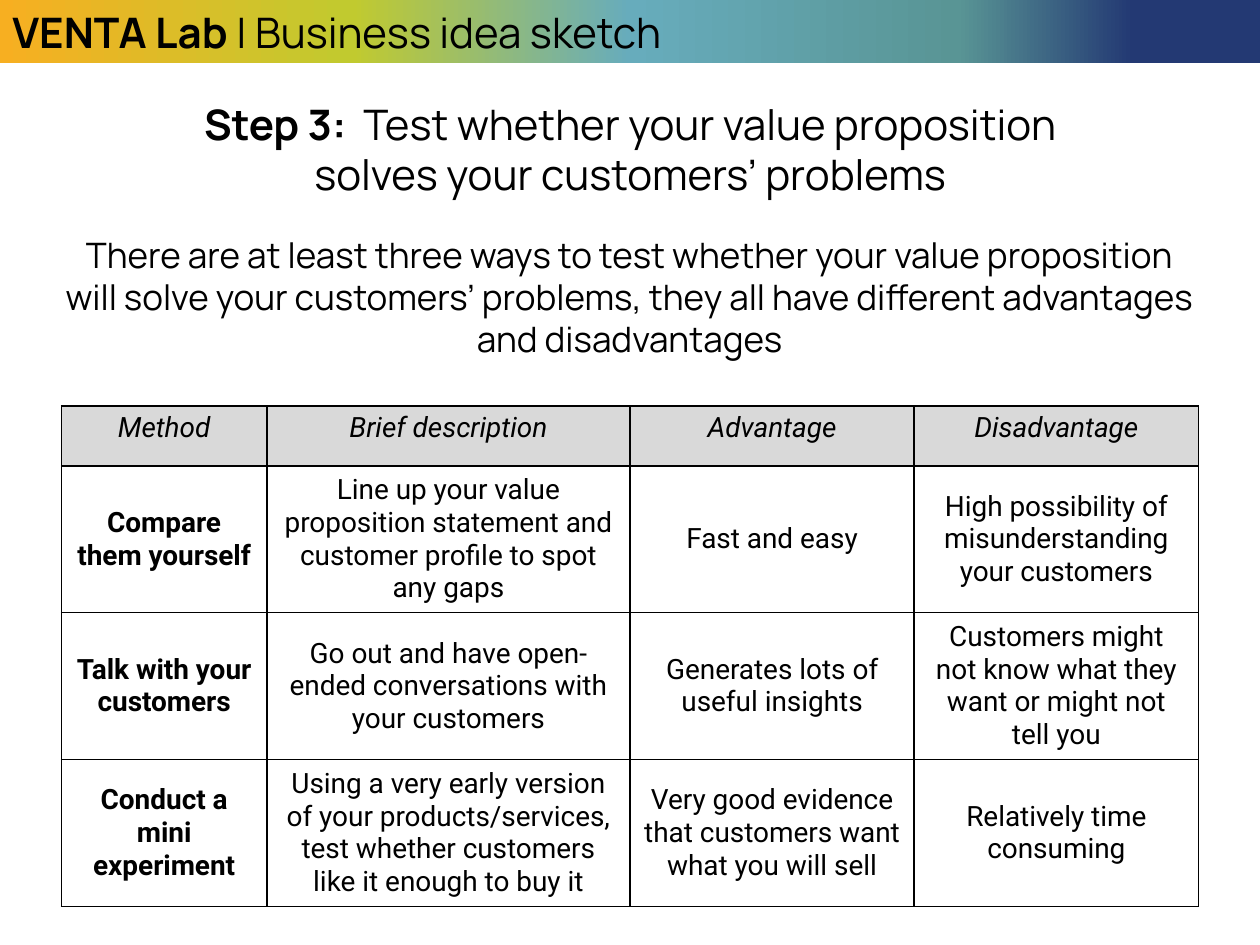
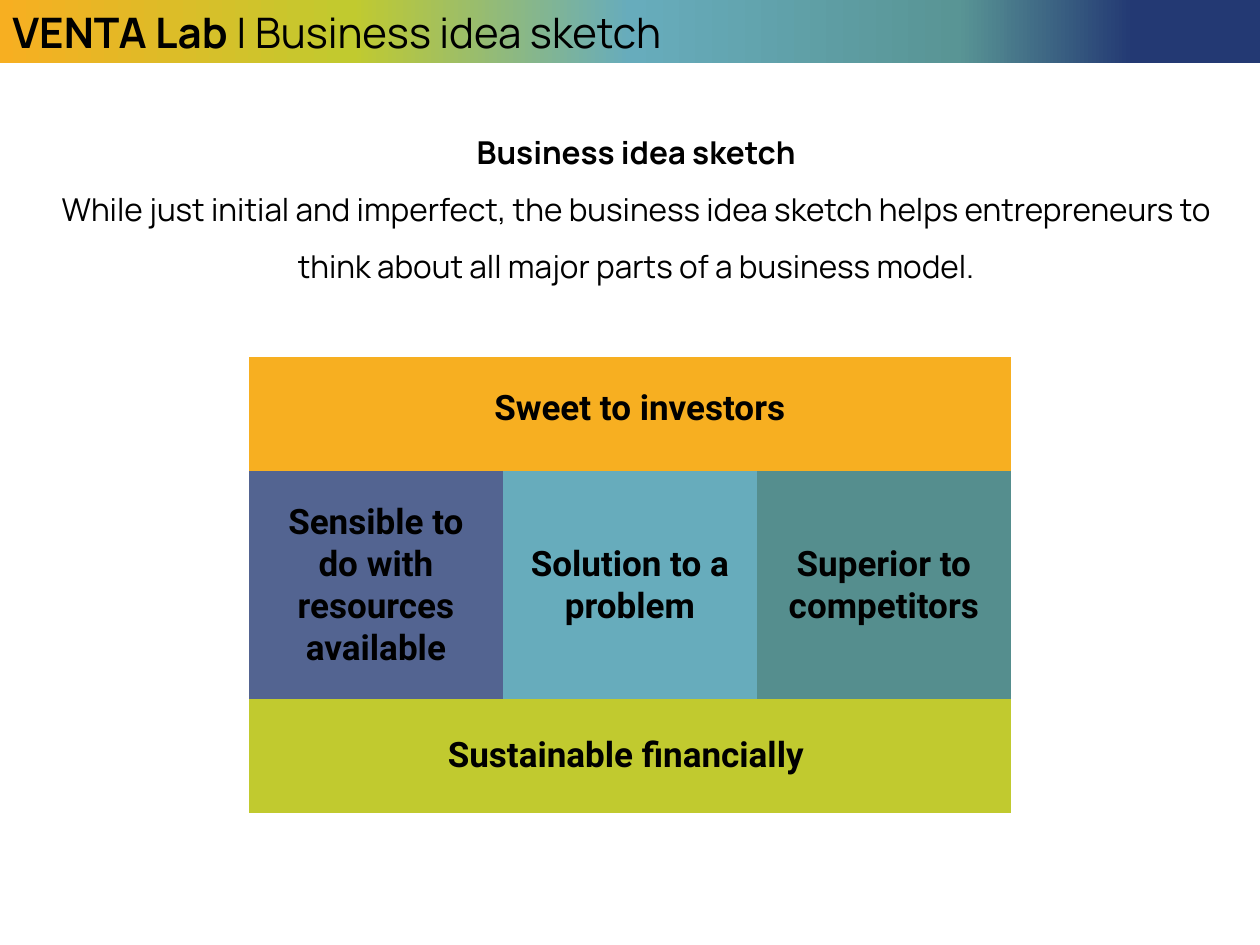
"""Build two business idea sketch slides: test methods table and model overview."""
from lxml import etree
from pptx import Presentation
from pptx import util as u
from pptx.dml.color import RGBColor
from pptx.enum import shapes, text
from pptx.oxml import ns

COLORS = {
    "black": "000000", "white": "FFFFFF", "grey": "D9D9D9",
    "orange": "F7AF21", "lime": "C1CA2F", "sky": "67ACBC",
    "sage": "599595", "teal": "558E8E", "navy": "233973",
}
HEAD, BODY = "Manrope", "Roboto"
NO_STYLE = "{2D5ABB26-0587-4C30-8999-92F81FD0307C}"
WIDTH, HEIGHT, BAND_HEIGHT = 25.4, 19.05, 1.27

BAND_TEXT = [("VENTA Lab ", True), ("| Business idea sketch", False)]
BAND_STOPS = [(0, "orange"), (28, "lime"), (50, "sky"), (76, "sage"), (90, "navy")]

STEP_TITLE = [
    ("Step 3:  ", True),
    ("Test whether your value proposition solves your customers’ problems", False),
]
STEP_INTRO = [(
    "There are at least three ways to test whether your value proposition will solve "
    "your customers’ problems, they all have different advantages and disadvantages",
    False,
)]
METHODS = [
    ("Method", "Brief description", "Advantage", "Disadvantage"),
    ("Compare them yourself",
     "Line up your value proposition statement and customer profile to spot any gaps",
     "Fast and easy",
     "High possibility of misunderstanding your customers"),
    ("Talk with your customers",
     "Go out and have open-ended conversations with your customers",
     "Generates lots of useful insights",
     "Customers might not know what they want or might not tell you"),
    ("Conduct a mini experiment",
     "Using a very early version of your products/services, test whether customers "
     "like it enough to buy it",
     "Very good evidence that customers want what you will sell",
     "Relatively time consuming"),
]
METHOD_COLS, METHOD_ROWS = [4.14, 7.32, 5.73, 5.73], [1.21, 2.96, 2.96, 2.96]

SKETCH_TITLE = [("Business idea sketch", True)]
SKETCH_INTRO = [(
    "While just initial and imperfect, the business idea sketch helps entrepreneurs "
    "to think about all major parts of a business model.", False,
)]
SKETCH_LEFT, SKETCH_TOP = 5.02, 7.2
SKETCH_COLS, SKETCH_ROWS = [5.12] * 3, [2.3, 4.6, 2.3]
# row, column, columns spanned, colour, opacity, label, label size, label shift
SKETCH_PARTS = [
    (0, 0, 3, "orange", 100, "Sweet to investors", (6.93, 1.12), (0.2, -0.15)),
    (1, 0, 1, "navy", 78, "Sensible to do with resources available", (4.67, 3.68), (0, -0.03)),
    (1, 1, 1, "sky", 100, "Solution to a problem", (4.67, 1.96), (0, -0.03)),
    (1, 2, 1, "teal", 100, "Superior to competitors", (4.67, 1.96), (0, -0.03)),
    (2, 0, 3, "lime", 100, "Sustainable financially", (8.36, 1.12), (-0.08, -0.06)),
]


def rgb(name):
    return RGBColor.from_string(COLORS[name])


def sub(parent, tag, **attrs):
    return etree.SubElement(parent, ns.qn(tag), **attrs)


def write(p, runs, size, font, align=text.PP_ALIGN.CENTER, italic=False):
    p.alignment = align
    for words, bold in runs:
        r = p.add_run()
        r.text = words
        r.font.name, r.font.size = font, u.Pt(size)
        r.font.bold, r.font.italic = bold, italic
        r.font.color.rgb = rgb("black")


def fill_placeholder(sp, box, runs, size, spacing):
    sp.left, sp.top, sp.width, sp.height = map(u.Cm, box)
    tf = sp.text_frame
    tf.word_wrap, tf.auto_size = True, text.MSO_AUTO_SIZE.NONE
    tf.vertical_anchor = text.MSO_ANCHOR.TOP
    p = tf.paragraphs[0]
    pPr = p._p.get_or_add_pPr()
    pPr.set("marL", "0")
    pPr.set("indent", "0")
    sub(pPr, "a:buNone")
    p.line_spacing, p.space_before = spacing, u.Pt(0)
    write(p, runs, size, HEAD)


def add_band(s):
    sp = s.shapes.add_shape(
        shapes.MSO_SHAPE.RECTANGLE, 0, 0, u.Cm(WIDTH), u.Cm(BAND_HEIGHT))
    sp.shadow.inherit = False
    sp.line.fill.background()
    sp.fill.gradient()
    sp.fill.gradient_angle = 0
    stops = sp._element.spPr.find(ns.qn("a:gradFill")).find(ns.qn("a:gsLst"))
    for stop in list(stops):
        stops.remove(stop)
    for pos, name in BAND_STOPS:
        sub(sub(stops, "a:gs", pos=str(pos * 1000)), "a:srgbClr", val=COLORS[name])
    tf = sp.text_frame
    tf.word_wrap, tf.vertical_anchor = True, text.MSO_ANCHOR.MIDDLE
    write(tf.paragraphs[0], BAND_TEXT, 24, HEAD, text.PP_ALIGN.LEFT)


def new_slide(prs, title, intro):
    s = prs.slides.add_slide(prs.slide_layouts[1])
    add_band(s)
    fill_placeholder(s.shapes.title, *title)
    fill_placeholder(s.placeholders[1], *intro)
    return s


def add_grid(s, left, top, cols, rows):
    frame = s.shapes.add_table(
        len(rows), len(cols), u.Cm(left), u.Cm(top), u.Cm(sum(cols)), u.Cm(sum(rows)))
    table = frame.table
    table.first_row = table.horz_banding = False
    table._tbl.tblPr.find(ns.qn("a:tableStyleId")).text = NO_STYLE
    for col, width in zip(table.columns, cols):
        col.width = u.Cm(width)
    for row, height in zip(table.rows, rows):
        row.height = u.Cm(height)
    return table


def paint(cell, name, opacity=100):
    cell.fill.solid()
    cell.fill.fore_color.rgb = rgb(name)
    if opacity < 100:
        color = cell._tc.tcPr.find(ns.qn("a:solidFill"))[0]
        sub(color, "a:alpha", val=str(opacity * 1000))


def add_borders(cell):
    tcPr = cell._tc.get_or_add_tcPr()
    for i, side in enumerate("LRTB"):
        line = sub(tcPr, f"a:ln{side}", w=str(u.Pt(1)))
        sub(sub(line, "a:solidFill"), "a:srgbClr", val=COLORS["black"])
        tcPr.insert(i, line)


def build_methods(prs):
    s = new_slide(
        prs,
        ((3.04, 1.85, 19.33, 2.31), STEP_TITLE, 24, 1.0),
        ((0.91, 4.57, 23.57, 2.82), STEP_INTRO, 20, 1.0))
    table = add_grid(s, 1.24, 8.18, METHOD_COLS, METHOD_ROWS)
    for i, row in enumerate(METHODS):
        header = i == 0
        for j, words in enumerate(row):
            cell = table.cell(i, j)
            paint(cell, "grey" if header else "white")
            add_borders(cell)
            cell.vertical_anchor = text.MSO_ANCHOR.TOP if header else text.MSO_ANCHOR.MIDDLE
            write(cell.text_frame.paragraphs[0], [(words, j == 0 and not header)],
                  16, BODY, italic=header)


def build_sketch(prs):
    s = new_slide(
        prs,
        ((0.25, 2.18, 25.15, 1.4), SKETCH_TITLE, 18, 1.5),
        ((0.25, 3.33, 25.15, 2.6), SKETCH_INTRO, 18, 1.5))
    table = add_grid(s, SKETCH_LEFT, SKETCH_TOP, SKETCH_COLS, SKETCH_ROWS)
    for i, j, span, name, opacity, label, (w, h), (dx, dy) in SKETCH_PARTS:
        cell = table.cell(i, j)
        if span > 1:
            cell.merge(table.cell(i, j + span - 1))
        paint(cell, name, opacity)
        x = SKETCH_LEFT + sum(SKETCH_COLS[:j]) + sum(SKETCH_COLS[j:j + span]) / 2 + dx
        y = SKETCH_TOP + sum(SKETCH_ROWS[:i]) + SKETCH_ROWS[i] / 2 + dy
        sp = s.shapes.add_textbox(*map(u.Cm, (x - w / 2, y - h / 2, w, h)))
        tf = sp.text_frame
        tf.word_wrap, tf.vertical_anchor = True, text.MSO_ANCHOR.MIDDLE
        write(tf.paragraphs[0], [(label, True)], 20, BODY)


def main():
    prs = Presentation()
    prs.slide_width, prs.slide_height = u.Cm(WIDTH), u.Cm(HEIGHT)
    build_methods(prs)
    build_sketch(prs)
    prs.save("out.pptx")


if __name__ == "__main__":
    main()
